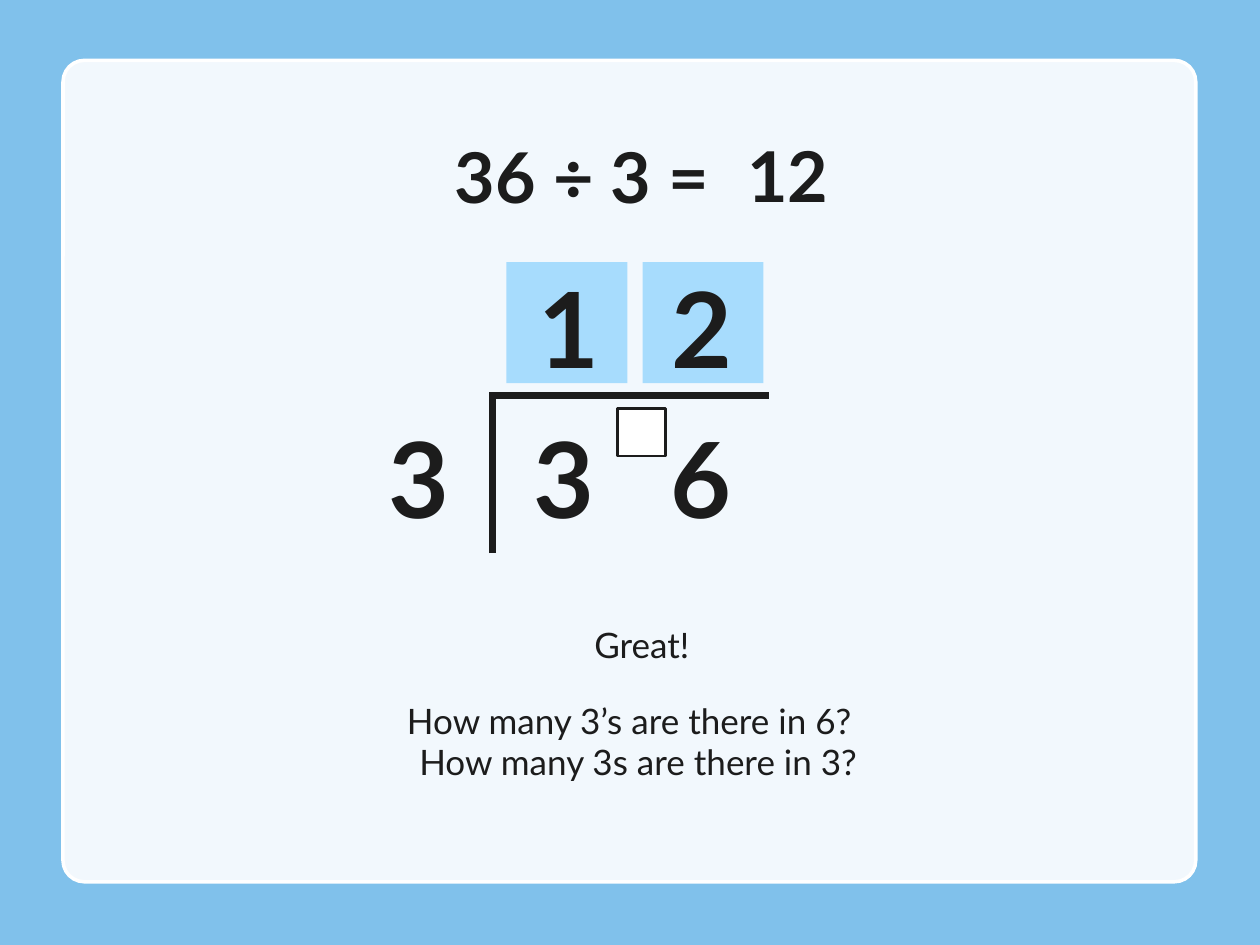
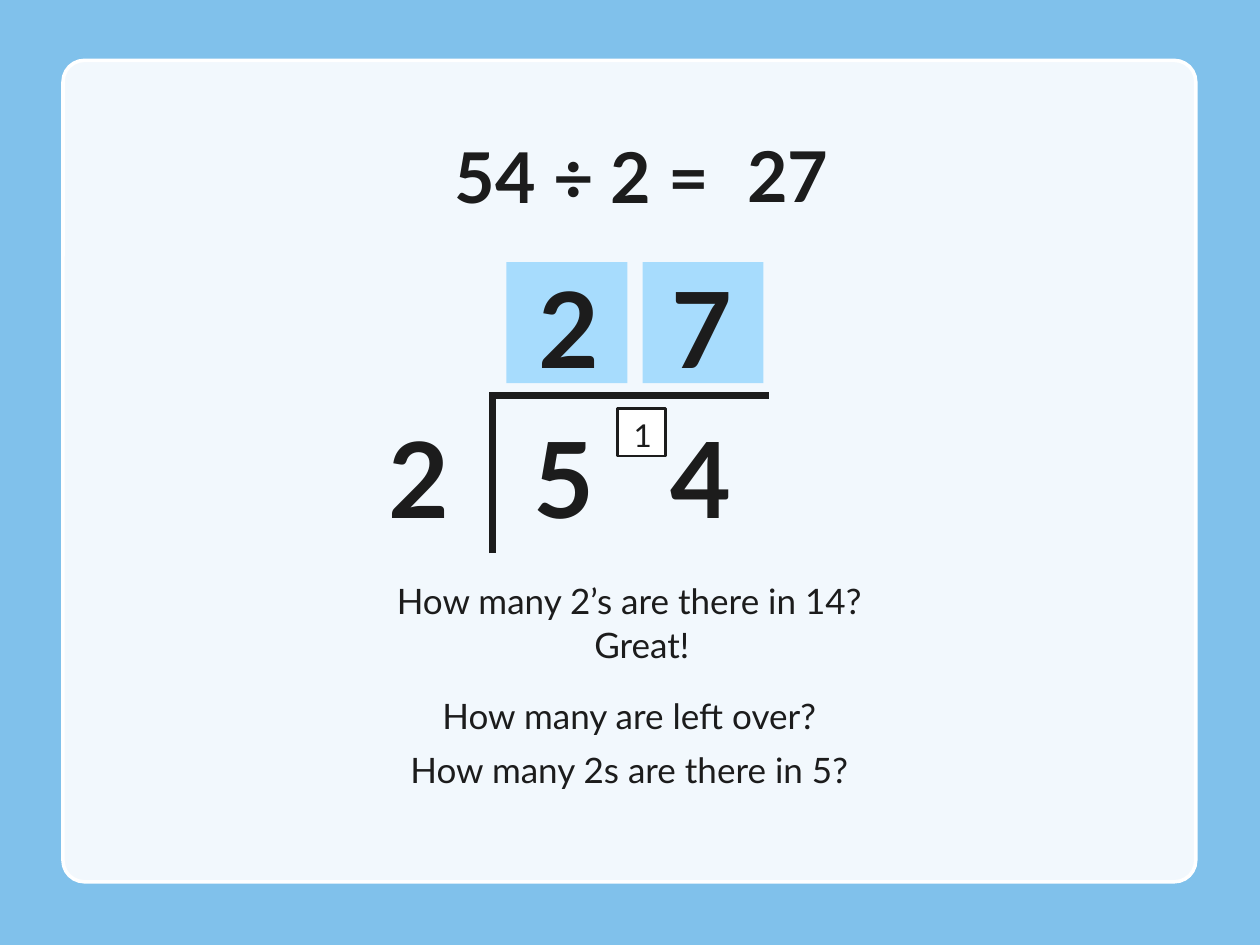
from lxml import etree
from pptx import Presentation
from pptx.dml.color import RGBColor
from pptx.enum.shapes import MSO_CONNECTOR, MSO_SHAPE
from pptx.enum.text import MSO_ANCHOR, MSO_AUTO_SIZE, PP_ALIGN
from pptx.oxml.ns import qn
from pptx.util import Pt

PROBLEMS = [
    {
        "dividend": "36", "divisor": "3", "quotient": "12", "carry": "",
        "prompts": [  # text, left, top
            ("Great!", 66.2, 352.8),
            ("How many 3’s are there in 6?", 59, 396),
            ("How many 3s are there in 3?", 64.1, 419.8),
        ],
    },
    {
        "dividend": "54", "divisor": "2", "quotient": "27", "carry": "1",
        "prompts": [
            ("Great!", 66.2, 352.8),
            ("How many 2’s are there in 14?", 59, 327.6),
            ("How many are left over?", 59, 393.1),
            ("How many 2s are there in 5?", 59, 424.1),
        ],
    },
]

COLORS = {"sky": "80C1EB", "white": "FFFFFF", "ink": "1C1C1C", "cell": "A7DCFD"}
FONT = "Lato"

PANEL = (36, 34.5, 647.3, 469.4)
LINE_W = 601.2          # width of the equation and prompt boxes
DIGIT_W, DIGIT_H = 59.8, 79.9
CELL = 69.1
CELL_X = (289.4, 367.2)  # tens, ones
QUOTIENT_X, QUOTIENT_Y = (295.2, 371.5), 146.9
DIVIDEND_X, DIVIDEND_Y = (292.3, 370.8), 232.6
DIVISOR_X = 209.5
BRACKET = [(281.5, 316.1, 281.5, 223.9), (280.1, 226.1, 439.2, 226.1)]


def rgb(name):
    return RGBColor.from_string(COLORS[name])


def pts(*values):
    return [Pt(v) for v in values]


def write(sp, text, size, bold=False, align=PP_ALIGN.CENTER):
    tf = sp.text_frame
    tf.text = text
    tf.word_wrap = True
    tf.auto_size = MSO_AUTO_SIZE.NONE
    tf.vertical_anchor = MSO_ANCHOR.TOP
    p = tf.paragraphs[0]
    p.alignment = align
    p.line_spacing = 1.0
    p.space_before = Pt(0)
    font = p.runs[0].font
    font.name, font.size, font.bold = FONT, Pt(size), bold
    font.color.rgb = rgb("ink")


def add_text(slide, box, text, size, **style):
    write(slide.shapes.add_textbox(*pts(*box)), text, size, **style)


def add_box(slide, box, fill, line=None, width=0, shape=MSO_SHAPE.RECTANGLE):
    sp = slide.shapes.add_shape(shape, *pts(*box))
    sp.shadow.inherit = False
    sp.fill.solid()
    sp.fill.fore_color.rgb = rgb(fill)
    if line:
        sp.line.color.rgb = rgb(line)
        sp.line.width = Pt(width)
    else:
        sp.line.fill.background()
    return sp


def add_line(slide, ends):
    cxn = slide.shapes.add_connector(MSO_CONNECTOR.STRAIGHT, *pts(*ends))
    cxn.line.color.rgb = rgb("ink")
    cxn.line.width = Pt(4)
    etree.SubElement(cxn.element.spPr, qn("a:effectLst"))


def set_backdrop(layout, slide):
    """Give the layout its sky and panel; the panel is drawn on a slide, then moved."""
    layout.background.fill.solid()
    layout.background.fill.fore_color.rgb = rgb("sky")
    panel = add_box(slide, PANEL, "white", "white", 2, MSO_SHAPE.ROUNDED_RECTANGLE)
    panel.adjustments[0] = 0.026
    color = panel.element.spPr.find(qn("a:solidFill"))[0]
    etree.SubElement(color, qn("a:alpha"), val="90000")
    layout.shapes.element.insert(2, panel.element)


def add_equation(slide, problem):
    title = slide.shapes.title
    title.left, title.top, title.width, title.height = pts(39.6, 72.7, LINE_W, 55.4)
    write(title, f"{problem['dividend']} ÷ {problem['divisor']} =", 40, bold=True)
    title.text_frame.margin_right = Pt(22.6)  # room before the answer
    add_text(slide, (419.8, 72, 61.2, 55.4), problem["quotient"], 40,
             bold=True, align=PP_ALIGN.LEFT)


def add_division(slide, problem):
    add_box(slide, (352.8, 233.3, 27.4, 27.4), "white", "ink", 1.5)
    if problem["carry"]:
        add_text(slide, (355, 234, 22.3, 28.8), problem["carry"], 18)
    for x in CELL_X:
        add_box(slide, (x, 149.8, CELL, CELL), "cell")

    digits = [(d, x, QUOTIENT_Y) for d, x in zip(problem["quotient"], QUOTIENT_X)]
    digits += [(d, x, DIVIDEND_Y) for d, x in zip(problem["dividend"], DIVIDEND_X)]
    digits.append((problem["divisor"], DIVISOR_X, DIVIDEND_Y))
    for digit, x, y in digits:
        add_text(slide, (x, y, DIGIT_W, DIGIT_H), digit, 60, bold=True)
    for ends in BRACKET:
        add_line(slide, ends)


def main():
    prs = Presentation()
    prs.slide_width, prs.slide_height = pts(720, 540)
    layout = prs.slide_layouts[5]
    for i, problem in enumerate(PROBLEMS):
        slide = prs.slides.add_slide(layout)
        if i == 0:
            set_backdrop(layout, slide)
        add_equation(slide, problem)
        add_division(slide, problem)
        for text, x, y in problem["prompts"]:
            add_text(slide, (x, y, LINE_W, 31.7), text, 20)
    prs.save("out.pptx")


if __name__ == "__main__":
    main()
